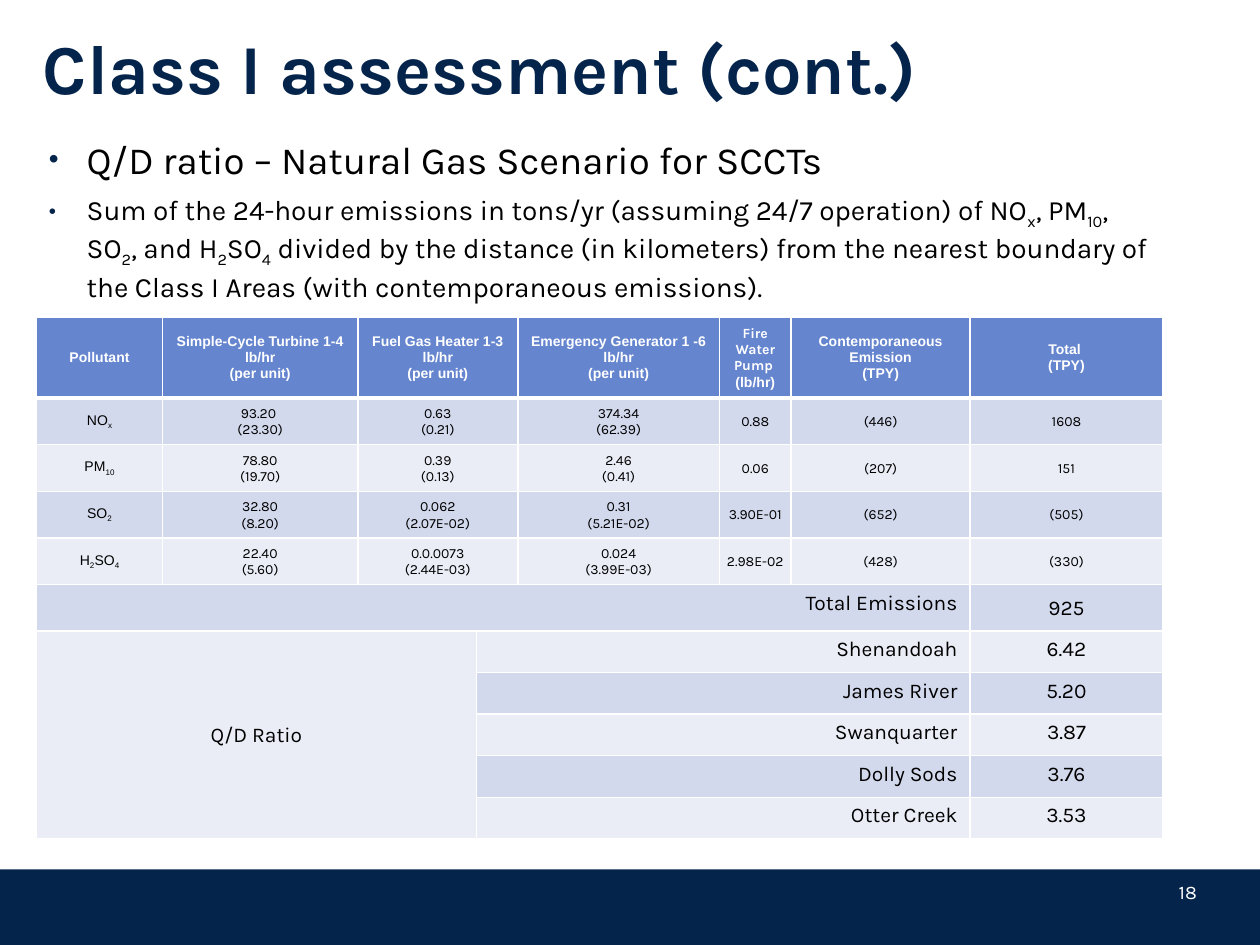
from lxml import etree
from pptx import Presentation
from pptx.dml.color import RGBColor
from pptx.enum.shapes import MSO_SHAPE
from pptx.enum.text import MSO_ANCHOR, PP_ALIGN
from pptx.oxml.ns import qn
from pptx.util import Inches, Pt

RECTANGLE = MSO_SHAPE.RECTANGLE
TOP, MIDDLE, BOTTOM = MSO_ANCHOR.TOP, MSO_ANCHOR.MIDDLE, MSO_ANCHOR.BOTTOM
LEFT, CENTER, RIGHT = PP_ALIGN.LEFT, PP_ALIGN.CENTER, PP_ALIGN.RIGHT

COLORS = {"navy": "04244B", "black": "000000", "white": "FFFFFF",
          "header": "6585CF", "dark_band": "D3D9ED", "light_band": "EAEDF6"}
BODY_FONT, LABEL_FONT = "Karla", "Arial"

COLUMN_WIDTHS = [1, 1.55, 0.94, 0.33, 1.6, 0.57, 1.42, 1.53]
ROW_HEIGHTS = [0.64] + [0.37] * 5 + [0.33] * 5
DATA_COLUMNS = [0, 1, 2, 4, 5, 6, 7]
HEADINGS = ["Pollutant", "Simple-Cycle Turbine 1-4\nlb/hr\n(per unit)",
            "Fuel Gas Heater 1-3\nlb/hr\n(per unit)",
            "Emergency Generator 1 -6\nlb/hr\n(per unit)",
            "Fire Water Pump \n(lb/hr)", "Contemporaneous Emission\n(TPY)",
            "Total \n(TPY)"]
POLLUTANTS = [
    ["NO_x_", "93.20 \n(23.30)", "0.63\n(0.21)", "374.34\n(62.39)",
     "0.88", "(446)", "1608"],
    ["PM_10_", "78.80\n(19.70)", "0.39\n(0.13)", "2.46\n(0.41)",
     "0.06", "(207)", "151"],
    ["SO_2_", "32.80\n(8.20)", "0.062\n(2.07E-02)", "0.31\n(5.21E-02)",
     "3.90E-01", "(652)", "(505)"],
    ["H_2_SO_4_", "22.40\n(5.60)", "0.0.0073\n(2.44E-03)",
     "0.024\n(3.99E-03)", "2.98E-02", "(428)", "(330)"],
]
RATIOS = [("Shenandoah", "6.42"), ("James River", "5.20"),
          ("Swanquarter", "3.87"), ("Dolly Sods", "3.76"),
          ("Otter Creek", "3.53")]
BULLETS = [
    ("Q/D ratio – Natural Gas Scenario for SCCTs", 22),
    ("Sum of the 24-hour emissions in tons/yr (assuming 24/7 operation) of "
     "NO_x_, PM_10_, SO_2_, and H_2_SO_4_ divided by the distance (in "
     "kilometers) from the nearest boundary of the Class I Areas (with "
     "contemporaneous emissions).", 16),
]


def rgb(name):
    """Return the named palette colour."""
    return RGBColor.from_string(COLORS[name])


def add_runs(paragraph, text, size, color, font=BODY_FONT, bold=False):
    """Add runs to a paragraph, lowering the parts held between underscores."""
    for index, part in enumerate(text.split("_")):
        if not part:
            continue
        run = paragraph.add_run()
        run.text = part
        run.font.size = Pt(size)
        run.font.name = font
        run.font.bold = bold
        run.font.color.rgb = rgb(color)
        if index % 2:
            run.font._element.set("baseline", "-25000")


def add_frame(slide, box, anchor, margins):
    """Add a wrapping text box and return its text frame."""
    frame = slide.shapes.add_textbox(*map(Inches, box)).text_frame
    frame.word_wrap = True
    frame.vertical_anchor = anchor
    frame.margin_left = frame.margin_right = Inches(margins[0])
    frame.margin_top = frame.margin_bottom = Inches(margins[1])
    return frame


def add_title(slide, box):
    """Place the slide title."""
    frame = add_frame(slide, box, BOTTOM, (0.05, 0))
    add_runs(frame.paragraphs[0], "Class I assessment (cont.)", 40, "navy", bold=True)


def add_bullets(slide, box):
    """Place the bulleted explanation of the ratio."""
    frame = add_frame(slide, box, TOP, (0.1, 0.05))
    for index, (text, size) in enumerate(BULLETS):
        paragraph = frame.add_paragraph() if index else frame.paragraphs[0]
        properties = paragraph._p.get_or_add_pPr()
        properties.set("marL", str(Inches(0.3)))
        properties.set("indent", str(-Inches(0.3)))
        if index:
            paragraph.space_before = Pt(6)
        bullet_color = etree.SubElement(properties, qn("a:buClr"))
        etree.SubElement(bullet_color, qn("a:srgbClr"), val=COLORS["navy"])
        etree.SubElement(properties, qn("a:buSzPct"), val="73000")
        etree.SubElement(properties, qn("a:buFont"), typeface="Arial")
        etree.SubElement(properties, qn("a:buChar"), char="•")
        add_runs(paragraph, text, size, "black")


def add_footer(slide, box):
    """Place the footer band and its slide number."""
    left, top, width, height = box
    band = slide.shapes.add_shape(RECTANGLE, *map(Inches, box))
    band.shadow.inherit = False
    band.fill.solid()
    band.fill.fore_color.rgb = rgb("navy")
    band.line.fill.background()
    number_box = (left + width - 1.14, top + 0.02, 0.64, 0.25)
    number = add_frame(slide, number_box, BOTTOM, (0, 0)).paragraphs[0]
    number.alignment = RIGHT
    add_runs(number, "18", 11, "white")


def style_cell(cell, fill, header):
    """Give a cell white borders and a solid fill."""
    properties = cell._tc.get_or_add_tcPr()
    for side in ("lnL", "lnR", "lnT", "lnB"):
        width = 3 if header and side == "lnB" else 1
        border = etree.SubElement(properties, qn(f"a:{side}"), w=str(Pt(width)))
        solid = etree.SubElement(border, qn("a:solidFill"))
        etree.SubElement(solid, qn("a:srgbClr"), val=COLORS["white"])
    cell.fill.solid()
    cell.fill.fore_color.rgb = rgb(fill)


def fill_cell(cell, text, size=8, color="black", font=BODY_FONT, bold=False,
              align=CENTER, anchor=MIDDLE, tight=False):
    """Write the lines of a cell as paragraphs."""
    cell.vertical_anchor = anchor
    if tight:
        cell.margin_left = cell.margin_right = cell.margin_top = Inches(0.01)
        cell.margin_bottom = 0
    for index, line in enumerate(text.split("\n")):
        frame = cell.text_frame
        paragraph = frame.add_paragraph() if index else frame.paragraphs[0]
        paragraph.alignment = align
        line_font = BODY_FONT if line.startswith("Fire") else font
        add_runs(paragraph, line, size, color, line_font, bold)


def add_emissions_table(slide, box):
    """Place the table of emissions, totals and ratios."""
    table = slide.shapes.add_table(
        len(ROW_HEIGHTS), len(COLUMN_WIDTHS), *map(Inches, box)).table
    for column, width in zip(table.columns, COLUMN_WIDTHS):
        column.width = Inches(width)
    for index, (row, height) in enumerate(zip(table.rows, ROW_HEIGHTS)):
        row.height = Inches(height)
        band = "dark_band" if index % 2 else "light_band"
        for cell in row.cells:
            style_cell(cell, band if index else "header", index == 0)

    for row in range(len(POLLUTANTS) + 1):
        table.cell(row, 2).merge(table.cell(row, 3))
    for column, heading in zip(DATA_COLUMNS, HEADINGS):
        fill_cell(table.cell(0, column), heading, 8, "white", LABEL_FONT, True)
    for row, values in enumerate(POLLUTANTS, 1):
        for column, value in zip(DATA_COLUMNS, values):
            font = BODY_FONT if column else LABEL_FONT
            fill_cell(table.cell(row, column), value, font=font, tight=column > 0)

    total_row = len(POLLUTANTS) + 1
    table.cell(total_row, 0).merge(table.cell(total_row, 6))
    fill_cell(table.cell(total_row, 0), "Total Emissions", 12, align=RIGHT, anchor=TOP)
    fill_cell(table.cell(total_row, 7), "925", 12, tight=True)

    first_ratio = total_row + 1
    table.cell(first_ratio, 0).merge(table.cell(total_row + len(RATIOS), 2))
    fill_cell(table.cell(first_ratio, 0), "Q/D Ratio", 12)
    for row, (area, ratio) in enumerate(RATIOS, first_ratio):
        table.cell(row, 3).merge(table.cell(row, 6))
        fill_cell(table.cell(row, 3), area, 12, align=RIGHT, anchor=TOP)
        fill_cell(table.cell(row, 7), ratio, 12, anchor=TOP)


def main():
    """Build and save the slide."""
    deck = Presentation()
    deck.slide_width, deck.slide_height = Inches(10), Inches(7.5)
    slide = deck.slides.add_slide(deck.slide_layouts[6])
    add_footer(slide, (0, 6.9, 10, 0.6))
    add_title(slide, (0.29, 0.13, 9, 0.73))
    add_bullets(slide, (0.29, 1.03, 9, 1.35))
    add_emissions_table(slide, (0.29, 2.52, 8.94, 4.11))
    deck.save("out.pptx")


if __name__ == "__main__":
    main()
